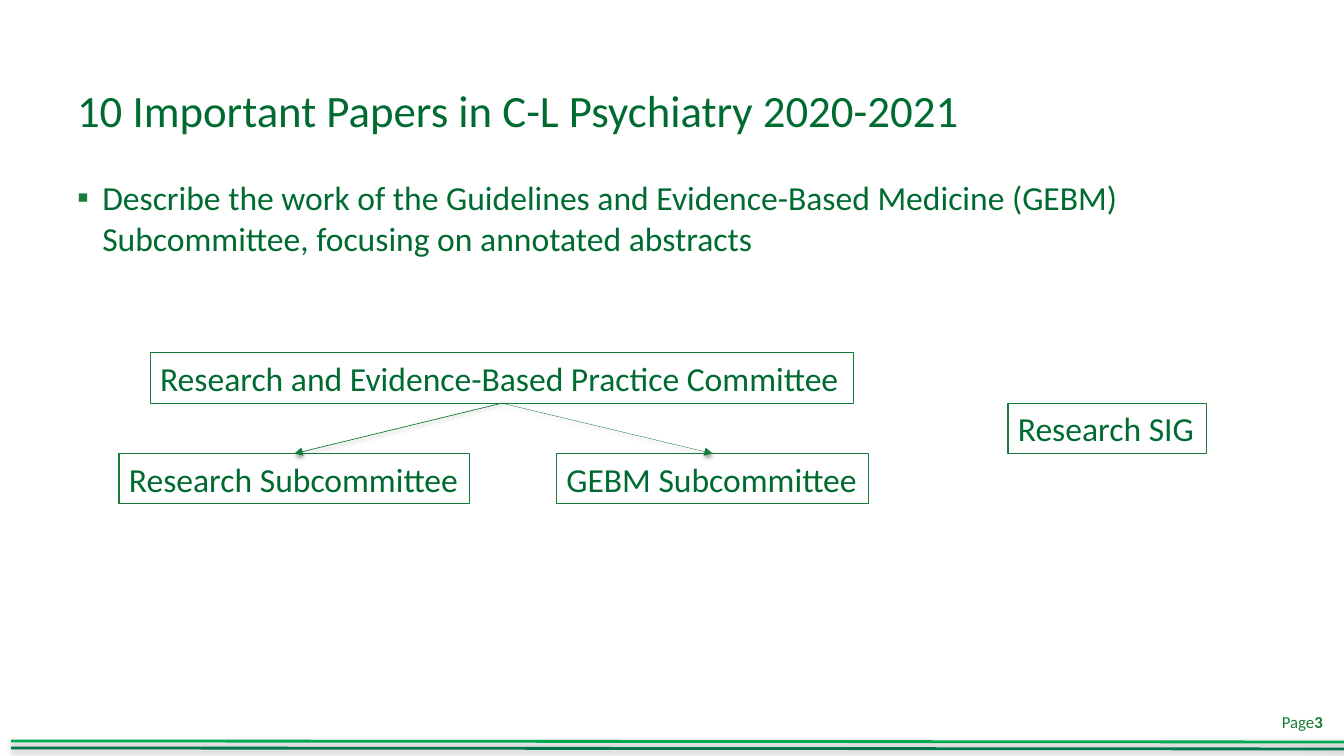
from dataclasses import dataclass

from lxml.etree import SubElement
from pptx import Presentation
from pptx.dml.color import RGBColor
from pptx.enum.shapes import MSO_CONNECTOR, MSO_SHAPE
from pptx.enum.text import MSO_ANCHOR, PP_ALIGN
from pptx.oxml.ns import qn
from pptx.util import Pt


@dataclass(frozen=True)
class Theme:
    font: str = "Calibri"
    text: RGBColor = RGBColor(0x00, 0x6B, 0x31)
    accent: RGBColor = RGBColor(0x17, 0x7D, 0x38)
    band_light: RGBColor = RGBColor(0x00, 0xA9, 0x50)
    band_dark: RGBColor = RGBColor(0x00, 0x76, 0x4B)
    title_size: int = 32
    body_size: int = 24
    footer_size: int = 12


@dataclass(frozen=True)
class Group:
    name: str
    left: float
    top: float
    width: float
    height: float = 36


@dataclass(frozen=True)
class Band:
    top: float
    color: RGBColor


@dataclass(frozen=True)
class Arrow:
    source: str
    target: str
    weight: float


THEME = Theme()
COMMITTEE = "Research and Evidence-Based Practice Committee"
RESEARCH = "Research Subcommittee"
GEBM = "GEBM Subcommittee"

GROUPS = [
    Group(COMMITTEE, 107.25, 252, 502.5),
    Group(GEBM, 397.5, 324, 223.25),
    Group(RESEARCH, 85, 324, 250.5),
    Group("Research SIG", 720, 288, 141.75),
]
ARROWS = [Arrow(COMMITTEE, RESEARCH, 0.5), Arrow(COMMITTEE, GEBM, 0.25)]
BANDS = [Band(529.25, THEME.band_light), Band(534.25, THEME.band_dark)]


def add_span(para, text: str, size: float, color: RGBColor, bold: bool = False) -> None:
    span = para.add_run()
    span.text = text
    formats = {"name": THEME.font, "size": Pt(size), "bold": bold}
    for name, value in formats.items():
        setattr(span.font, name, value)
    span.font.color.rgb = color


def add_text_box(page, left: float, top: float, width: float, height: float,
                 anchor=MSO_ANCHOR.TOP):
    box = page.shapes.add_textbox(Pt(left), Pt(top), Pt(width), Pt(height))
    box.text_frame.word_wrap = True
    box.text_frame.vertical_anchor = anchor
    return box.text_frame.paragraphs[0]


def add_bullet(para, symbol: str, color: RGBColor, indent: float) -> None:
    properties = para._p.get_or_add_pPr()
    properties.set("marL", str(Pt(indent)))
    properties.set("indent", str(-Pt(indent)))
    bullet_color = SubElement(properties, qn("a:buClr"))
    SubElement(bullet_color, qn("a:srgbClr"), val=str(color))
    SubElement(properties, qn("a:buFont"), typeface="Arial")
    SubElement(properties, qn("a:buChar"), char=symbol)


def add_line(page, start: tuple[float, float], end: tuple[float, float],
             color: RGBColor, weight: float):
    line = page.shapes.add_connector(
        MSO_CONNECTOR.STRAIGHT, *(Pt(value) for value in start + end))
    line.line.color.rgb = color
    line.line.width = Pt(weight)
    # Soft shadow below the line
    effects = SubElement(line._element.spPr, qn("a:effectLst"))
    shadow = SubElement(effects, qn("a:outerShdw"), blurRad=str(Pt(3.1)),
                        dist=str(Pt(1.6)), dir="5400000", rotWithShape="0")
    shade = SubElement(shadow, qn("a:srgbClr"), val="000000")
    SubElement(shade, qn("a:alpha"), val="38000")
    return line


def add_group(page, group: Group):
    box = page.shapes.add_shape(MSO_SHAPE.RECTANGLE, Pt(group.left), Pt(group.top),
                                Pt(group.width), Pt(group.height))
    box.shadow.inherit = False
    box.fill.background()
    box.line.color.rgb = THEME.accent
    box.line.width = Pt(0.75)
    formats = {"word_wrap": True, "vertical_anchor": MSO_ANCHOR.TOP, "margin_right": 0}
    for name, value in formats.items():
        setattr(box.text_frame, name, value)
    para = box.text_frame.paragraphs[0]
    para.alignment = PP_ALIGN.LEFT
    add_span(para, group.name, THEME.body_size, THEME.text)
    return box


def add_arrow(page, arrow: Arrow, boxes: dict) -> None:
    line = add_line(page, (0, 0), (0, 0), THEME.accent, arrow.weight)
    line.begin_connect(boxes[arrow.source], 2)
    line.end_connect(boxes[arrow.target], 0)
    SubElement(line.line._get_or_add_ln(), qn("a:tailEnd"), type="triangle")


def main() -> None:
    deck = Presentation()
    deck.slide_width, deck.slide_height = Pt(960), Pt(540)
    page = deck.slides.add_slide(deck.slide_layouts[6])

    # Footer bands and page number
    for band in BANDS:
        add_line(page, (8, band.top), (962, band.top + 0.75), band.color, 2)
    para = add_text_box(page, 898, 504.75, 54, 28.75)
    para.alignment = PP_ALIGN.RIGHT
    add_span(para, "Page", THEME.footer_size, THEME.accent)
    add_span(para, "3", THEME.footer_size, THEME.accent, bold=True)

    # Title
    para = add_text_box(page, 48, 33, 864, 90, MSO_ANCHOR.MIDDLE)
    add_span(para, "10 Important Papers in C-L Psychiatry 2020-2021",
             THEME.title_size, THEME.text)

    # Objective
    para = add_text_box(page, 48, 123, 864, 77)
    add_bullet(para, "▪", THEME.accent, 18)
    add_span(para, "Describe the work of the Guidelines and Evidence-Based Medicine (GEBM) "
             "Subcommittee, focusing on annotated abstracts", THEME.body_size, THEME.text)

    # Committee structure
    boxes = {group.name: add_group(page, group) for group in GROUPS}
    for arrow in ARROWS:
        add_arrow(page, arrow, boxes)

    deck.save("out.pptx")


if __name__ == "__main__":
    main()
